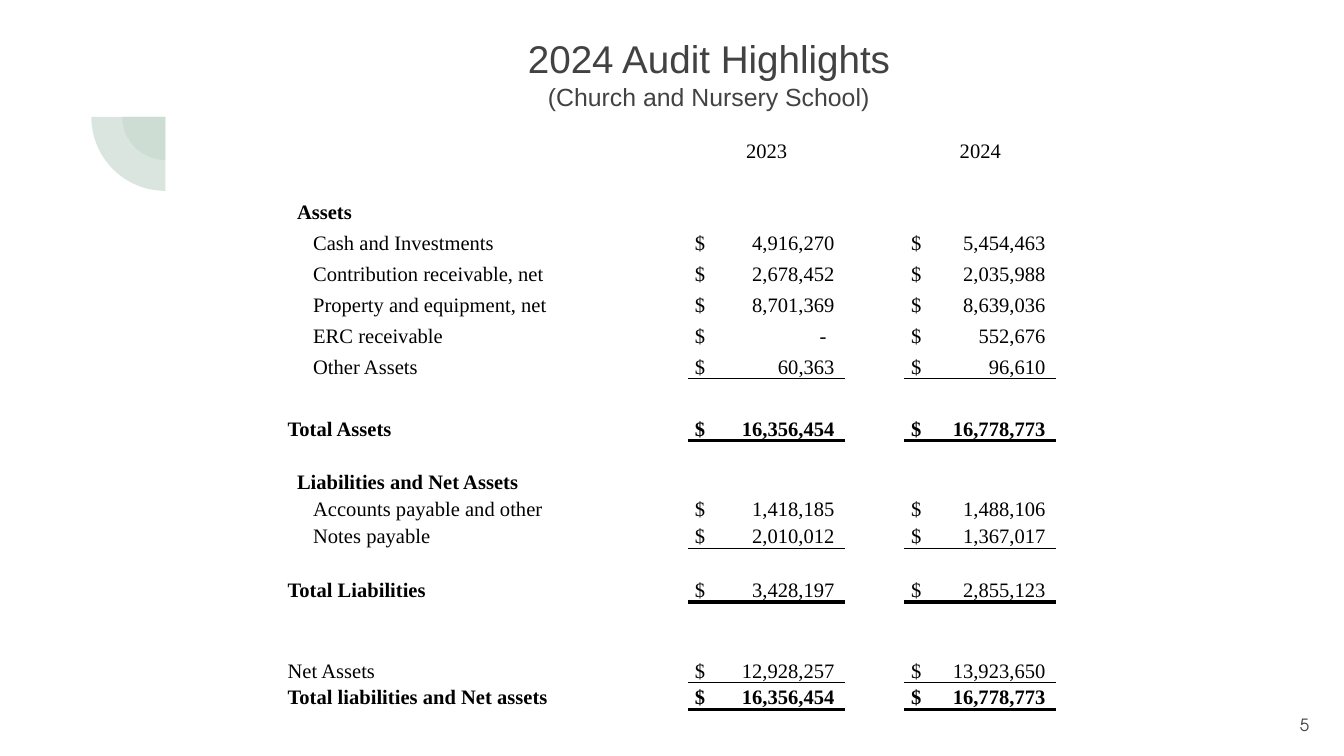
import math
from dataclasses import dataclass
from typing import Optional

from lxml import etree
from pptx import Presentation
from pptx import util as u
from pptx.dml.color import RGBColor
from pptx.enum import text
from pptx.oxml import ns

Inches, Pt = u.Inches, u.Pt

BLACK = RGBColor(0x00, 0x00, 0x00)
GRAY = RGBColor(0x42, 0x42, 0x42)
SAGE = RGBColor(0xC9, 0xDB, 0xD1)
PLAIN_TABLE = "{2D5ABB26-0587-4C30-8999-92F81FD0307C}"
SERIF = "Times New Roman"
THIN, THICK = 0.5, 2
HEADING, ITEM = 0.07, 0.19  # label indents
COLUMNS = (2.99, 1.17, 0.44, 1.13)
ROW_HEIGHTS = [0.23] * 10 + [0.2] * 10
AMOUNT_TABS = {1: 1.04, 3: 1.0}  # right edge of the figures, by column


@dataclass
class Line:
    label: str = ""
    amounts: tuple[str, ...] = ()
    indent: float = 0
    bold: bool = False
    bold_amounts: bool = False
    rule: Optional[float] = None


BALANCE_SHEET = [
    Line(),
    Line("Assets", indent=HEADING, bold=True),
    Line("Cash and Investments", ("4,916,270", "5,454,463"), ITEM),
    Line("Contribution receivable, net", ("2,678,452", "2,035,988"), ITEM),
    Line("Property and equipment, net", ("8,701,369", "8,639,036"), ITEM),
    Line("ERC receivable", ("-", "552,676"), ITEM),
    Line("Other Assets", ("60,363", "96,610"), ITEM, rule=THIN),
    Line(),
    Line("Total Assets", ("16,356,454", "16,778,773"), 0, True, True, THICK),
    Line(),
    Line("Liabilities and Net Assets", indent=HEADING, bold=True),
    Line("Accounts payable and other", ("1,418,185", "1,488,106"), ITEM),
    Line("Notes payable", ("2,010,012", "1,367,017"), ITEM, rule=THIN),
    Line(),
    Line("Total Liabilities", ("3,428,197", "2,855,123"), bold=True, rule=THICK),
    Line(),
    Line(),
    Line("Net Assets", ("12,928,257", "13,923,650"), rule=THIN),
    Line("Total liabilities and Net assets", ("16,356,454", "16,778,773"), 0, True, True, THICK),
]


def add_span(para, words: str, font: str, size: float, color: RGBColor, bold: bool = False) -> None:
    span = para.add_run()
    span.text = words
    span.font.name, span.font.size, span.font.bold = font, Pt(size), bold
    span.font.color.rgb = color


def add_box(page, left: float, top: float, width: float, height: float):
    box = page.shapes.add_textbox(Inches(left), Inches(top), Inches(width), Inches(height))
    frame = box.text_frame
    frame.margin_left = frame.margin_right = Inches(0.1)
    frame.margin_top = frame.margin_bottom = Inches(0.1)
    frame.word_wrap = True
    return frame


def add_quarter_disc(page, radius: float) -> None:
    """Draw the lower left quarter of a disc centred on the ornament's corner."""
    x, y, steps = 1.23, 0.87, 32
    angles = [math.pi / 2 * (1 + step / steps) for step in range(steps + 1)]
    arc = [(Inches(x + radius * math.cos(a)), Inches(y + radius * math.sin(a))) for a in angles]
    builder = page.shapes.build_freeform(Inches(x), Inches(y))
    builder.add_line_segments(arc, close=True)
    disc = builder.convert_to_shape()
    disc.shadow.inherit = False
    disc.line.fill.background()
    disc.fill.solid()
    disc.fill.fore_color.rgb = SAGE
    tint = disc.fill._xPr.find(".//" + ns.qn("a:srgbClr"))
    etree.SubElement(tint, ns.qn("a:alpha"), val="70000")


def add_rule(cell, edge: str, width: Optional[float]) -> None:
    """Set a cell border, or none; edge is lnT or lnB, in that order."""
    border = etree.SubElement(cell._tc.get_or_add_tcPr(), ns.qn("a:" + edge))
    if width is None:
        etree.SubElement(border, ns.qn("a:noFill"))
        return
    border.set("w", str(Pt(width)))
    fill = etree.SubElement(border, ns.qn("a:solidFill"))
    etree.SubElement(fill, ns.qn("a:srgbClr"), val=str(BLACK))


def set_right_tab(para, position: float) -> None:
    tabs = etree.SubElement(para._p.get_or_add_pPr(), ns.qn("a:tabLst"))
    etree.SubElement(tabs, ns.qn("a:tab"), pos=str(Inches(position)), algn="r")


def fill_line(table, row: int, line: Line, above: Optional[float]) -> None:
    label = table.cell(row, 0)
    if line.label:
        label.margin_left = Inches(0.01 + line.indent)
        add_span(label.text_frame.paragraphs[0], line.label, SERIF, 11, BLACK, line.bold)
    for column, amount in zip(AMOUNT_TABS, line.amounts):
        cell = table.cell(row, column)
        cell.margin_left = Inches(0.05)
        para = cell.text_frame.paragraphs[0]
        set_right_tab(para, AMOUNT_TABS[column] - (0.06 if amount == "-" else 0))
        add_span(para, f"$\t{amount}", SERIF, 11, BLACK, line.bold_amounts)
    for column in AMOUNT_TABS:
        for edge, width in (("lnT", above), ("lnB", line.rule)):
            add_rule(table.cell(row, column), edge, width)


def add_balance_sheet(page) -> None:
    frame = page.shapes.add_table(len(ROW_HEIGHTS), len(COLUMNS), Inches(2.13), Inches(0.98),
                                  Inches(sum(COLUMNS)), Inches(sum(ROW_HEIGHTS)))
    table = frame.table
    table.first_row = table.horz_banding = False
    table._tbl.tblPr.find(ns.qn("a:tableStyleId")).text = PLAIN_TABLE
    for column, width in zip(table.columns, COLUMNS):
        column.width = Inches(width)
    for row, height in zip(table.rows, ROW_HEIGHTS):
        row.height = Inches(height)
    for cell in table.iter_cells():
        cell.margin_left = cell.margin_right = cell.margin_top = Inches(0.01)
        cell.margin_bottom = 0
        cell.vertical_anchor = text.MSO_ANCHOR.BOTTOM

    for column, year in zip(AMOUNT_TABS, ("2023", "2024")):
        para = table.cell(0, column).text_frame.paragraphs[0]
        para.alignment = text.PP_ALIGN.CENTER
        add_span(para, year, SERIF, 11, BLACK)
    above = None
    for row, line in enumerate(BALANCE_SHEET, start=1):
        fill_line(table, row, line, above)
        above = line.rule

    for cell in table.iter_cells():
        cell.fill.background()
        para = cell.text_frame.paragraphs[0]
        if not para.runs:  # keeps empty rows from growing
            etree.SubElement(para._p, ns.qn("a:endParaRPr"), sz="1100")


def add_title(page) -> None:
    para = add_box(page, 1.43, 0.16, 7.69, 0.82).paragraphs[0]
    para.alignment = text.PP_ALIGN.CENTER
    add_span(para, "2024 Audit Highlights", "Arial", 20.7, GRAY)
    para.add_line_break()
    add_span(para, "(Church and Nursery School)", "Arial", 13.3, GRAY)


def add_page_number(page) -> None:
    frame = add_box(page, 9.49, 5.22, 0.35, 0.35)
    frame.word_wrap = False
    frame.vertical_anchor = text.MSO_ANCHOR.MIDDLE
    para = frame.paragraphs[0]
    para.alignment = text.PP_ALIGN.RIGHT
    add_span(para, "5", "TeX Gyre Adventor", 9, GRAY)


def main() -> None:
    deck = Presentation()
    deck.slide_width = Inches(10)
    deck.slide_height = Inches(10 * 9 / 16)
    page = deck.slides.add_slide(deck.slide_layouts[6])
    for radius in (0.32, 0.55):
        add_quarter_disc(page, radius)
    add_title(page)
    add_balance_sheet(page)
    add_page_number(page)
    deck.save("out.pptx")


if __name__ == "__main__":
    main()
